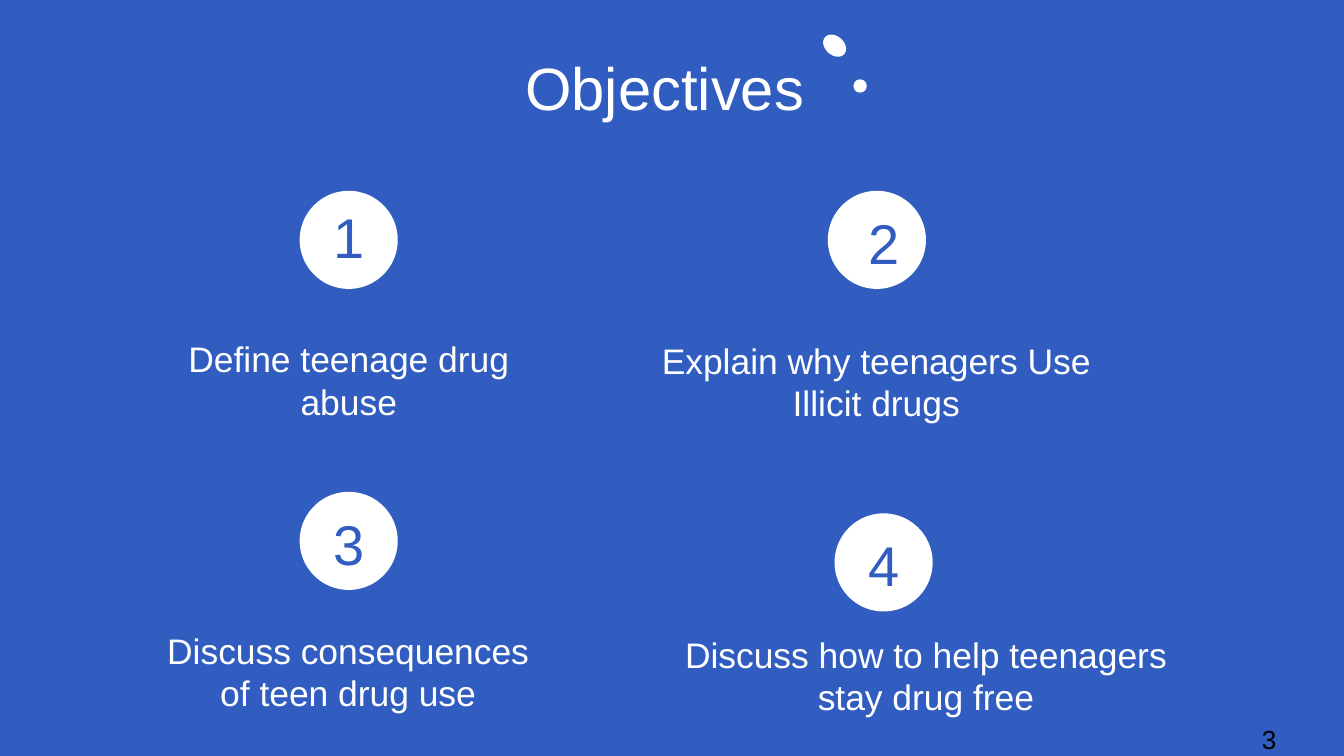
import math

from pptx import Presentation
from pptx.dml.color import RGBColor
from pptx.enum import shapes, text
from pptx.util import Inches, Pt

BLUE = RGBColor(0x30, 0x5D, 0xBF)
WHITE = RGBColor(0xFF, 0xFF, 0xFF)
BLACK = RGBColor(0, 0, 0)
FONT = "Arial"
CIRCLE = 0.73

# number, circle (left, top), number (left, top), caption, caption box
OBJECTIVES = [
    ("1", (2.23, 1.42), (2.23, 1.38),
     "Define teenage drug abuse", (1.27, 2.41, 2.65, 0.94)),
    ("2", (6.16, 1.42), (6.21, 1.42),
     "Explain why teenagers Use Illicit drugs", (4.81, 2.42, 3.42, 0.46)),
    ("3", (2.23, 3.66), (2.23, 3.66),
     "Discuss consequences of teen drug use", (1, 4.58, 3.18, 0.46)),
    ("4", (6.21, 3.82), (6.21, 3.82),
     "Discuss how to help teenagers stay drug free", (4.97, 4.61, 3.84, 0.46)),
]


def paint_white(shape):
    shape.shadow.inherit = False
    shape.fill.solid()
    shape.fill.fore_color.rgb = WHITE
    shape.line.fill.background()


def add_circle(slide, left, top, size):
    circle = slide.shapes.add_shape(
        shapes.MSO_SHAPE.OVAL,
        Inches(left), Inches(top), Inches(size), Inches(size))
    paint_white(circle)


def add_blob(slide, center_x, center_y, width, height, rotation):
    """Draw a tilted oval outline around a center."""
    steps = 48
    outline = []
    for step in range(steps):
        angle = 2 * math.pi * step / steps
        outline.append((Inches(center_x + width / 2 * math.cos(angle)),
                        Inches(center_y + height / 2 * math.sin(angle))))
    builder = slide.shapes.build_freeform(*outline[0])
    builder.add_line_segments(outline[1:], close=True)
    blob = builder.convert_to_shape()
    blob.rotation = rotation
    paint_white(blob)


def add_text(slide, words, box, size, color, inset=0.1,
             align=text.PP_ALIGN.CENTER, anchor=text.MSO_ANCHOR.TOP):
    frame = slide.shapes.add_textbox(*map(Inches, box)).text_frame
    frame.word_wrap = True
    frame.vertical_anchor = anchor
    frame.margin_left = frame.margin_right = Inches(0.1)
    frame.margin_top = frame.margin_bottom = Inches(inset)
    frame.text = words
    paragraph = frame.paragraphs[0]
    paragraph.alignment = align
    font = paragraph.runs[0].font
    font.name = FONT
    font.size = Pt(size)
    font.color.rgb = color
    return paragraph


def add_title(slide):
    title = add_text(slide, "Objectives", (0.34, 0.28, 9.32, 0.63), 32, WHITE)
    ending = title.add_run()
    ending.text = " "
    ending.font.name = FONT
    ending.font.size = Pt(28)
    ending.font.color.rgb = WHITE


def add_objective(slide, number, circle_at, number_at, caption, caption_box):
    add_circle(slide, *circle_at, CIRCLE)
    add_text(slide, number, (*number_at, CIRCLE, CIRCLE), 30, BLUE,
             anchor=text.MSO_ANCHOR.BOTTOM)
    add_text(slide, caption, caption_box, 19, WHITE)


def main():
    deck = Presentation()
    deck.slide_width = Inches(10)
    deck.slide_height = deck.slide_width * 9 // 16
    slide = deck.slides.add_slide(deck.slide_layouts[6])
    slide.background.fill.solid()
    slide.background.fill.fore_color.rgb = BLUE

    # Title with its two dots
    add_title(slide)
    add_circle(slide, 6.35, 0.59, 0.1)
    add_blob(slide, 6.21, 0.34, 0.19, 0.14, 41.8)

    # Numbered objectives
    for objective in OBJECTIVES:
        add_objective(slide, *objective)

    # Slide number
    add_text(slide, "3", (9.29, 5.33, 0.54, 0.34), 14, BLACK, inset=0.05,
             align=text.PP_ALIGN.LEFT)

    deck.save("out.pptx")


if __name__ == "__main__":
    main()
